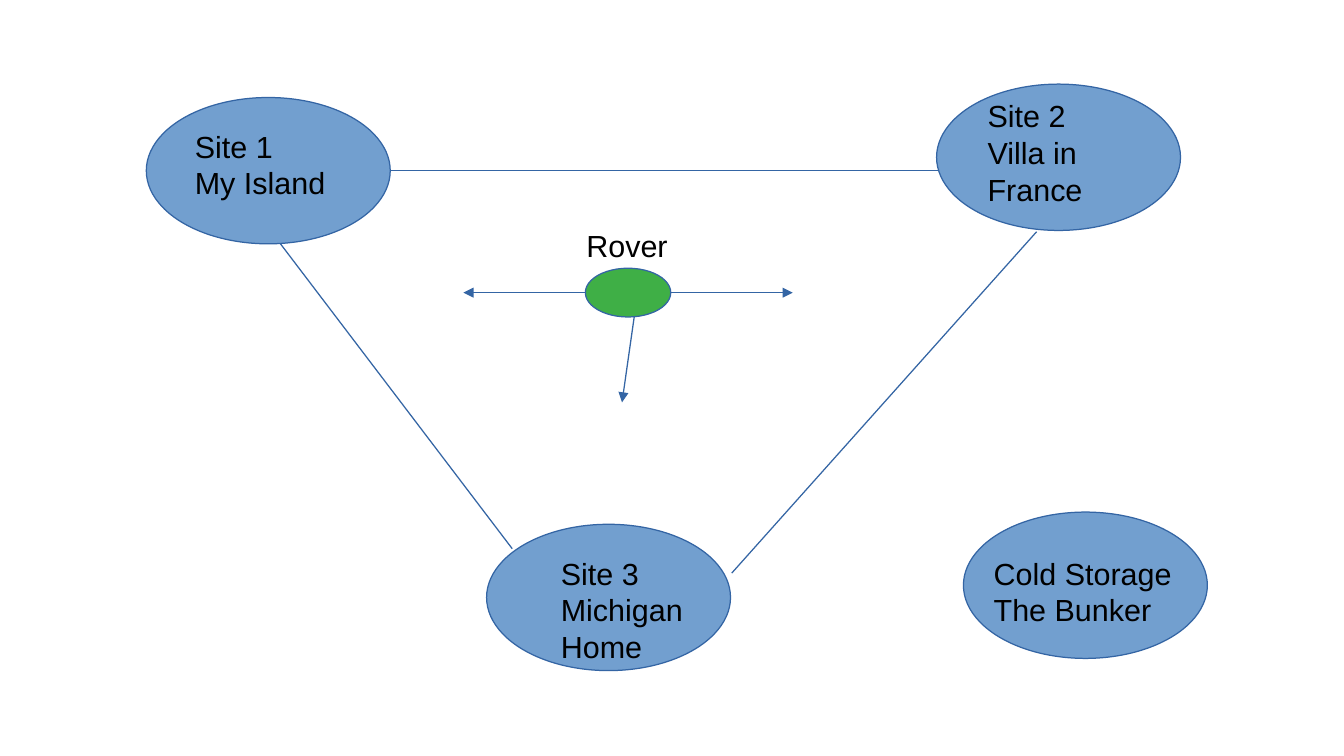
from pptx import Presentation
from pptx.dml.color import RGBColor
from pptx.enum import shapes
from pptx.oxml import ns, xmlchemy
from pptx.util import Inches, Pt

BLUE = RGBColor(0x72, 0x9F, 0xCF)
GREEN = RGBColor(0x3F, 0xAF, 0x46)
OUTLINE = RGBColor(0x34, 0x65, 0xA4)
BLACK = RGBColor(0, 0, 0)

# Sites: ellipse left and top, label box, label lines
SITE_SIZE = (2, 1.2)
SITES = [
    ((1.2, 0.8), (1.5, 1, 1.5, 0.8), ["Site 1", "My Island"]),
    ((7.68, 0.69), (8, 0.75, 1.5, 1.15), ["Site 2", "Villa in France"]),
    ((3.99, 4.3), (4.5, 4.5, 1.25, 1), ["Site 3", "Michigan Home"]),
    ((7.9, 4.2), (8.05, 4.5, 1.7, 0.74), ["Cold Storage", "The Bunker"]),
]
ROVER = (4.8, 2.2, 0.7, 0.4)
ROVER_LABEL = (4.71, 1.81, 0.9, 0.4)
ROVER_ARROWS = [(5.5, 2.4, 6.5, 2.4), (4.8, 2.4, 3.8, 2.4), (5.2, 2.6, 5.1, 3.3)]
SITE_LINKS = [(3.2, 1.4, 7.7, 1.4), (2.3, 2, 4.2, 4.5), (6, 4.7, 8.5, 1.9)]


def add_ellipse(slide, box, color):
    ellipse = slide.shapes.add_shape(shapes.MSO_SHAPE.OVAL, *map(Inches, box))
    ellipse.shadow.inherit = False
    ellipse.fill.solid()
    ellipse.fill.fore_color.rgb = color
    ellipse.line.color.rgb = OUTLINE
    ellipse.line.width = Pt(0.75)


def add_line(slide, ends, arrow=False):
    line = slide.shapes.add_connector(shapes.MSO_CONNECTOR.STRAIGHT, *map(Inches, ends))
    line.line.color.rgb = OUTLINE
    line.line.width = Pt(0.75)
    properties = line._element.spPr
    properties.append(xmlchemy.OxmlElement("a:effectLst"))
    if arrow:
        head = xmlchemy.OxmlElement("a:tailEnd")
        head.set("type", "triangle")
        properties.find(ns.qn("a:ln")).append(head)


def add_text(slide, box, lines, size=18, font="Arial", color=BLACK):
    frame = slide.shapes.add_textbox(*map(Inches, box)).text_frame
    frame.word_wrap = True
    frame.text = "\n".join(lines)
    for paragraph in frame.paragraphs:
        paragraph.font.size = Pt(size)
        paragraph.font.name = font
        paragraph.font.color.rgb = color


def main():
    deck = Presentation()
    deck.slide_width, deck.slide_height = Inches(11.02), Inches(6.2)
    slide = deck.slides.add_slide(deck.slide_layouts[6])

    # Sites
    for corner, label_box, lines in SITES:
        add_ellipse(slide, corner + SITE_SIZE, BLUE)
        add_text(slide, label_box, lines)

    # Rover and the directions it moves in
    add_ellipse(slide, ROVER, GREEN)
    add_text(slide, ROVER_LABEL, ["Rover"])
    for ends in ROVER_ARROWS:
        add_line(slide, ends, arrow=True)

    # Links between the sites
    for ends in SITE_LINKS:
        add_line(slide, ends)

    deck.save("out.pptx")


if __name__ == "__main__":
    main()
